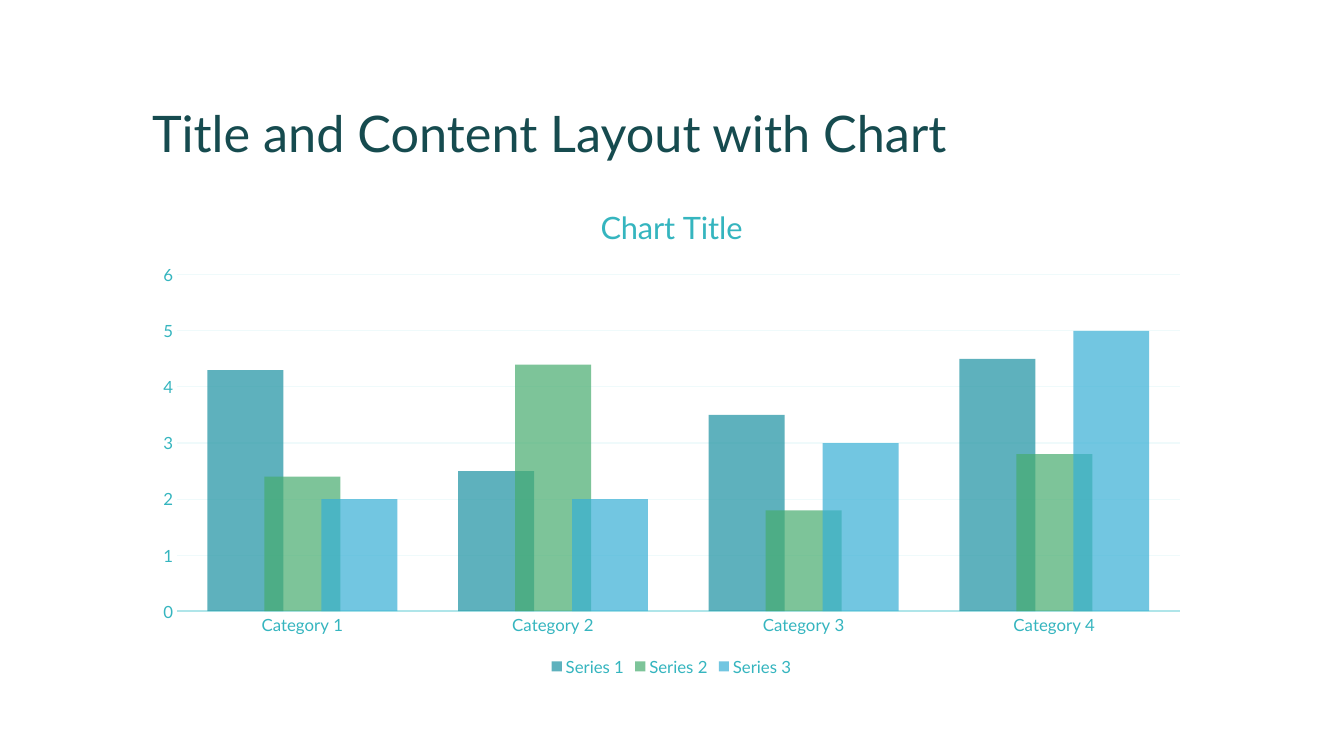
"""Build a slide with a title and a clustered column chart."""
from lxml import etree
from pptx import Presentation, util as u
from pptx.chart import data
from pptx.dml import color
from pptx.enum import chart as charts, shapes, text
from pptx.oxml import ns

COLORS = {
    "white": "FFFFFF",
    "title": "164B4F",
    "label": "35B5BF",
    "axis": "AFE5E9",
    "grid": "EFFAFB",
    "Series 1": "1B91A1",
    "Series 2": "46AC6F",
    "Series 3": "37AFD5",
}
SERIES = {
    "Series 1": (4.3, 2.5, 3.5, 4.5),
    "Series 2": (2.4, 4.4, 1.8, 2.8),
    "Series 3": (2, 2, 3, 5),
}


def rgb(name):
    return color.RGBColor.from_string(COLORS[name])


def write_text(frame, content, size, color_name, line_spacing=None):
    paragraph = frame.paragraphs[0]
    paragraph.line_spacing = line_spacing
    run = paragraph.add_run()
    run.text = content
    run.font.name = "Lato"
    run.font.size = u.Pt(size)
    run.font.bold = False
    run.font.color.rgb = rgb(color_name)


presentation = Presentation()
presentation.slide_width = u.Inches(13.33)
presentation.slide_height = u.Inches(7.5)
slide = presentation.slides.add_slide(presentation.slide_layouts[6])

panel = slide.shapes.add_shape(
    shapes.MSO_SHAPE.RECTANGLE, u.Inches(0.91), 0, u.Inches(12.41), u.Inches(7.5)
)
panel.shadow.inherit = False
panel.fill.solid()
panel.fill.fore_color.rgb = rgb("white")
panel.line.fill.background()

title = slide.shapes.add_textbox(
    u.Inches(1.41), u.Inches(0.42), u.Inches(10.5), u.Inches(1.25)
)
title.text_frame.word_wrap = True
title.text_frame.vertical_anchor = text.MSO_ANCHOR.BOTTOM
write_text(title.text_frame, "Title and Content Layout with Chart", 36, "title", 0.9)

chart_data = data.CategoryChartData()
chart_data.categories = [f"Category {number}" for number in range(1, 5)]
for name, values in SERIES.items():
    chart_data.add_series(name, values)
chart = slide.shapes.add_chart(
    charts.XL_CHART_TYPE.COLUMN_CLUSTERED,
    u.Inches(1.41), u.Inches(1.83), u.Inches(10.5), u.Inches(4.92),
    chart_data,
).chart
chart.font.name = "Lato"
chart.font.size = u.Pt(12)
chart.font.color.rgb = rgb("label")
chart.has_title = True
write_text(chart.chart_title.text_frame, "Chart Title", 22, "label")
chart.chart_title.include_in_layout = False
chart.has_legend = True
chart.legend.position = charts.XL_LEGEND_POSITION.BOTTOM
chart.legend.include_in_layout = False

for axis in (chart.category_axis, chart.value_axis):
    axis.major_tick_mark = charts.XL_TICK_MARK.NONE
    axis.minor_tick_mark = charts.XL_TICK_MARK.NONE
chart.category_axis.format.line.color.rgb = rgb("axis")
chart.category_axis.format.line.width = u.Pt(1.25)
value_axis = chart.value_axis
value_axis.minimum_scale = 0
value_axis.maximum_scale = 6
value_axis.major_unit = 1
value_axis.format.line.fill.background()
value_axis.major_gridlines.format.line.color.rgb = rgb("grid")
value_axis.major_gridlines.format.line.width = u.Pt(0.75)

plot = chart.plots[0]
plot.vary_by_categories = False
plot.gap_width = 80
plot.overlap = 25
for series in plot.series:
    series.format.fill.solid()
    series.format.fill.fore_color.rgb = rgb(series.name)
    series.format.line.fill.background()
    fill_color = series.format.fill._xPr.find(".//" + ns.qn("a:srgbClr"))
    etree.SubElement(fill_color, ns.qn("a:alpha"), val="70000")

presentation.save("out.pptx")
